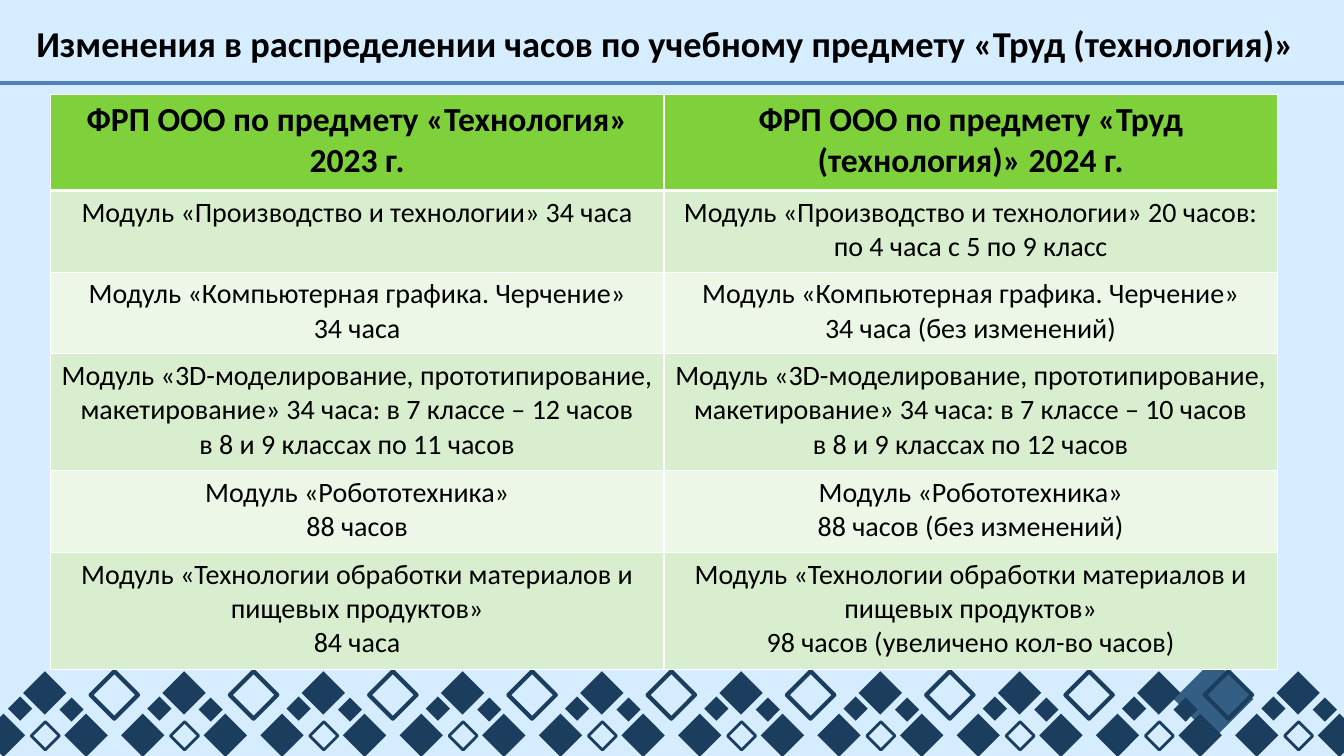
import pptx
import pptx.util
import pptx.dml.color
import pptx.enum.shapes
import pptx.enum.text
import pptx.oxml
import pptx.oxml.ns
from dataclasses import dataclass

Inches = pptx.util.Inches
Pt = pptx.util.Pt

# Content: each cell is a list of paragraphs
TITLE = "Изменения в распределении часов по учебному предмету «Труд (технология)»"
DRAWING = "Модуль «Компьютерная графика. Черчение»"
MODELING = "Модуль «3D-моделирование, прототипирование, макетирование» 34 часа: в 7 классе – "
ROBOTICS = "Модуль «Робототехника»"
MATERIALS = "Модуль «Технологии обработки материалов и пищевых продуктов»"
ROWS = [
    (["ФРП ООО по предмету «Технология» 2023 г."],
     ["ФРП ООО по предмету «Труд (технология)» 2024 г."]),
    (["Модуль «Производство и технологии» 34 часа"],
     ["Модуль «Производство и технологии» 20 часов: по 4 часа с 5 по 9 класс"]),
    ([DRAWING, "34 часа"], [DRAWING, "34 часа (без изменений)"]),
    ([MODELING + "12 часов", "в 8 и 9 классах по 11 часов"],
     [MODELING + "10 часов", "в 8 и 9 классах по 12 часов"]),
    ([ROBOTICS, "88 часов"], [ROBOTICS, "88 часов (без изменений)"]),
    ([MATERIALS, "84 часа"], [MATERIALS, "98 часов (увеличено кол-во часов)"]),
]
ROW_HEIGHTS = [0.95, 0.81, 0.81, 1.16, 0.81, 1.16]
COLUMN_WIDTH = 6.09

# Ornament tile: left, top, size, outline width (0 means filled)
TILE = [
    (-0.18, 7.08, 0.43, 0), (0.31, 7.16, 0.28, 2), (0.23, 6.66, 0.43, 0),
    (0.64, 7.08, 0.43, 0), (0.08, 6.91, 0.24, 0), (0.59, 6.92, 0.24, 0),
]
LARGE_OUTLINE = (0.9, 6.66, 0.47, 3)
TILE_COUNT = 10
TILE_PITCH = 12.44 / (TILE_COUNT - 1)


@dataclass(frozen=True)
class Theme:
    font: str = "Calibri"
    background: str = "D6ECFF"
    text: str = "000000"
    navy: str = "1B3E5E"
    accent: str = "345E84"
    rule: str = "4F81BD"
    border: str = "FFFFFF"
    header: str = "7FD13B"
    bands: tuple = ("D8EECE", "ECF7E8")
    title_size: int = 26
    header_size: int = 24
    body_size: int = 20


THEME = Theme()


def rgb(value):
    return pptx.dml.color.RGBColor.from_string(value)


def add_text(paragraph, text, size, bold, alignment):
    paragraph.alignment = alignment
    run = paragraph.add_run()
    run.text = text
    run.font.name = THEME.font
    run.font.size = Pt(size)
    run.font.bold = bold
    run.font.color.rgb = rgb(THEME.text)


def add_diamond(slide, left, top, size, outline, color):
    diamond = slide.shapes.add_shape(
        pptx.enum.shapes.MSO_SHAPE.DIAMOND,
        Inches(left), Inches(top), Inches(size), Inches(size))
    diamond.shadow.inherit = False
    if outline:
        diamond.fill.background()
        diamond.line.color.rgb = rgb(color)
        diamond.line.width = Pt(outline)
    else:
        diamond.fill.solid()
        diamond.fill.fore_color.rgb = rgb(color)
        diamond.line.fill.background()


def add_ornament(slide):
    add_diamond(slide, 11.65, 6.54, 0.79, 0, THEME.accent)
    for index in range(TILE_COUNT):
        is_last = index == TILE_COUNT - 1
        for left, top, size, outline in TILE + ([] if is_last else [LARGE_OUTLINE]):
            add_diamond(slide, left + index * TILE_PITCH, top, size, outline, THEME.navy)


def add_rule(slide):
    rule = slide.shapes.add_connector(
        pptx.enum.shapes.MSO_CONNECTOR.STRAIGHT,
        0, Inches(0.82), Inches(13.34), Inches(0.82))
    rule.line.color.rgb = rgb(THEME.rule)
    rule.line.width = Pt(3)
    rule._element.spPr.append(pptx.oxml.parse_xml(
        f"<a:effectLst {pptx.oxml.ns.nsdecls('a')}/>"))


def format_title(slide):
    title = slide.shapes.title
    title.left, title.top = Inches(0.26), Inches(0.16)
    title.width, title.height = Inches(12.73), Inches(0.54)
    frame = title.text_frame
    frame.word_wrap = True
    frame.vertical_anchor = pptx.enum.text.MSO_ANCHOR.TOP
    frame.auto_size = pptx.enum.text.MSO_AUTO_SIZE.SHAPE_TO_FIT_TEXT
    add_text(frame.paragraphs[0], TITLE, THEME.title_size, True,
             pptx.enum.text.PP_ALIGN.LEFT)


def set_borders(cell, row_index):
    widths = {"L": 1, "R": 1, "T": 3 if row_index == 1 else 1,
              "B": 3 if row_index == 0 else 1}
    properties = cell._tc.get_or_add_tcPr()
    for side, width in widths.items():
        properties.append(pptx.oxml.parse_xml(
            f'<a:ln{side} {pptx.oxml.ns.nsdecls("a")} w="{Pt(width)}"><a:solidFill>'
            f'<a:srgbClr val="{THEME.border}"/></a:solidFill></a:ln{side}>'))


def add_hours_table(slide):
    table = slide.shapes.add_table(
        len(ROWS), 2, Inches(0.5), Inches(0.94),
        Inches(2 * COLUMN_WIDTH), Inches(sum(ROW_HEIGHTS))).table
    for column in table.columns:
        column.width = Inches(COLUMN_WIDTH)
    for row_index, (texts, height) in enumerate(zip(ROWS, ROW_HEIGHTS)):
        table.rows[row_index].height = Inches(height)
        is_header = row_index == 0
        fill = THEME.header if is_header else THEME.bands[(row_index - 1) % 2]
        size = THEME.header_size if is_header else THEME.body_size
        for column_index, lines in enumerate(texts):
            cell = table.cell(row_index, column_index)
            set_borders(cell, row_index)
            cell.fill.solid()
            cell.fill.fore_color.rgb = rgb(fill)
            frame = cell.text_frame
            for line_index, line in enumerate(lines):
                paragraph = frame.add_paragraph() if line_index else frame.paragraphs[0]
                add_text(paragraph, line, size, is_header,
                         pptx.enum.text.PP_ALIGN.CENTER)


def main():
    presentation = pptx.Presentation()
    presentation.slide_width = Inches(13.34)
    presentation.slide_height = Inches(7.5)
    slide = presentation.slides.add_slide(presentation.slide_layouts[5])
    slide.background.fill.solid()
    slide.background.fill.fore_color.rgb = rgb(THEME.background)
    add_ornament(slide)
    add_rule(slide)
    format_title(slide)
    add_hours_table(slide)
    presentation.save("out.pptx")


if __name__ == "__main__":
    main()
